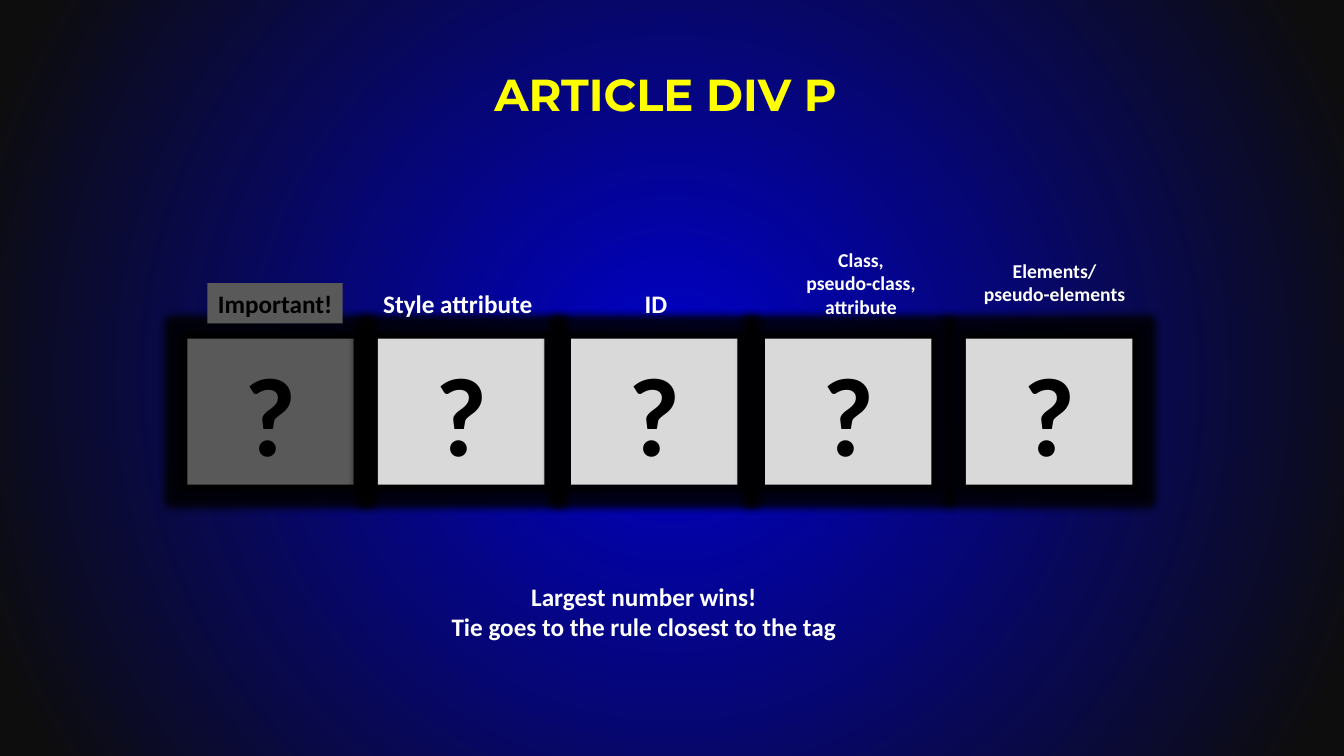
from lxml import etree
from pptx import Presentation
from pptx.dml.color import RGBColor
from pptx.enum.shapes import MSO_SHAPE
from pptx.enum.text import MSO_ANCHOR, MSO_AUTO_SIZE, PP_ALIGN
from pptx.oxml.ns import qn
from pptx.util import Inches, Pt

RECTANGLE = MSO_SHAPE.RECTANGLE
MIDDLE = MSO_ANCHOR.MIDDLE
GROW = MSO_AUTO_SIZE.SHAPE_TO_FIT_TEXT
FIXED = MSO_AUTO_SIZE.NONE
CENTER = PP_ALIGN.CENTER

COLORS = {
    "blue": "0000CC",
    "night": "0D0D0D",
    "muted": "595959",
    "light": "D9D9D9",
    "black": "000000",
    "white": "FFFFFF",
    "yellow": "FFFF00",
}
COLUMNS, ROWS = 160, 90
CARD_TOP, CARD_WIDTH, CARD_HEIGHT = 40.3, 19.8, 17.4
CARDS = [(22.3, "muted"), (45, "light"), (68, "light"), (91.1, "light"), (115, "light")]
LABELS = [
    (["Style attribute"], (44.3, 33.7, 20.4, 4.8), 18, False),
    (["ID"], (75.5, 33.7, 5.2, 4.8), 18, False),
    (["Class, pseudo-class, attribute"], (94.6, 28.9, 15.8, 9.7), 14, True),
    (["Elements/", "pseudo-elements"], (115.9, 30.2, 19.3, 6.8), 14, False),
    (["Largest number wins!", "Tie goes to the rule closest to the tag"],
     (52.4, 68.6, 48.5, 8.5), 18, False),
]


def rgb(color):
    return RGBColor.from_string(COLORS[color])


class SlideBuilder:
    font = "Calibri"
    title_font = "Montserrat"

    def __init__(self, presentation):
        self.column = presentation.slide_width / COLUMNS
        self.row = presentation.slide_height / ROWS
        self.slide = presentation.slides.add_slide(presentation.slide_layouts[5])

    def box(self, left, top, width, height):
        return (round(left * self.column), round(top * self.row),
                round(width * self.column), round(height * self.row))

    def background(self, center, edge):
        fill = self.slide.background.fill
        fill.gradient()
        for stop, color, position in zip(fill.gradient_stops, (center, edge), (0, 0.95)):
            stop.color.rgb = rgb(color)
            stop.position = position
        gradient = self.slide.element.find(".//" + qn("a:gradFill"))
        gradient.remove(gradient.find(qn("a:lin")))
        circle = etree.SubElement(gradient, qn("a:path"), {"path": "circle"})
        etree.SubElement(circle, qn("a:fillToRect"), l="50000", t="50000", r="50000", b="50000")

    def add_text(self, shape, lines, size, color, font=None, wrap=True, auto_size=GROW):
        frame = shape.text_frame
        frame.word_wrap = wrap
        frame.auto_size = auto_size
        for index, line in enumerate(lines):
            paragraph = frame.add_paragraph() if index else frame.paragraphs[0]
            paragraph.alignment = CENTER
            run = paragraph.add_run()
            run.text = line
            run.font.name = font or self.font
            run.font.size = Pt(size)
            run.font.bold = True
            run.font.color.rgb = rgb(color)

    def title(self, text, area):
        shape = self.slide.shapes.title
        shape.left, shape.top, shape.width, shape.height = self.box(*area)
        self.add_text(shape, [text], 32, "yellow", self.title_font, auto_size=FIXED)
        shape.text_frame.vertical_anchor = MIDDLE

    def panel(self, text, area, fill, size, wrap=True):
        shape = self.slide.shapes.add_shape(RECTANGLE, *self.box(*area))
        shape.shadow.inherit = False
        shape.fill.solid()
        shape.fill.fore_color.rgb = rgb(fill)
        shape.line.fill.background()
        self.add_text(shape, [text], size, "black", wrap=wrap)
        return shape

    def card(self, left, fill):
        shape = self.panel("?", (left, CARD_TOP, CARD_WIDTH, CARD_HEIGHT), fill, 80)
        effects = shape.element.spPr.find(qn("a:effectLst"))
        glow = etree.SubElement(effects, qn("a:glow"), rad=str(int(Pt(11))))
        color = etree.SubElement(glow, qn("a:srgbClr"), val=COLORS["black"])
        etree.SubElement(color, qn("a:alpha"), val="85000")

    def label(self, lines, area, size, wrap):
        shape = self.slide.shapes.add_textbox(*self.box(*area))
        self.add_text(shape, lines, size, "white", wrap=wrap)


def main():
    presentation = Presentation()
    presentation.slide_width = Inches(13.33)
    presentation.slide_height = Inches(7.5)
    builder = SlideBuilder(presentation)
    builder.background("blue", "night")
    builder.title("ARTICLE DIV P ", (8, 3.6, 144, 15))
    for left, fill in CARDS:
        builder.card(left, fill)
    builder.panel("Important!", (24.7, 33.7, 16.1, 4.8), "muted", 18, wrap=False)
    for lines, area, size, wrap in LABELS:
        builder.label(lines, area, size, wrap)
    presentation.save("out.pptx")


if __name__ == "__main__":
    main()
